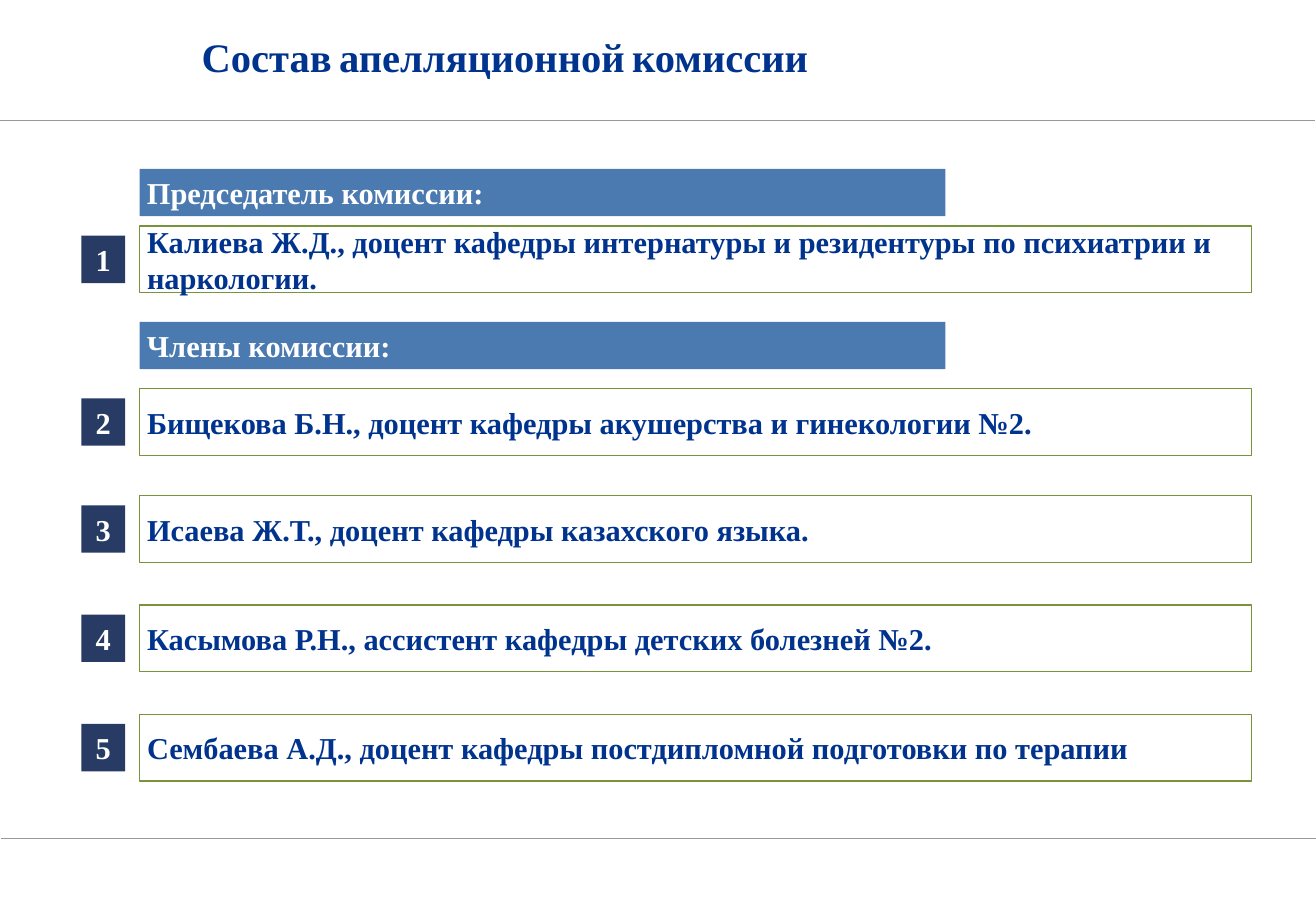
from dataclasses import dataclass

from lxml.etree import SubElement
from pptx import Presentation
from pptx.dml.color import RGBColor
from pptx.enum.shapes import MSO_CONNECTOR, MSO_SHAPE
from pptx.enum.text import MSO_ANCHOR, MSO_AUTO_SIZE, PP_ALIGN
from pptx.oxml.ns import qn
from pptx.slide import Slide
from pptx.util import Inches, Pt

SERIF = "Times New Roman"
NAVY, BADGE, BAND = "00338D", "283B64", "4A7AAF"
GREEN, GREY, WHITE = "77933C", "97989A", "FFFFFF"
ROW_LEFT, BADGE_LEFT, BADGE_DROP = 1.15, 0.67, 0.08


@dataclass
class Heading:
    top: float
    text: str


@dataclass
class Member:
    top: float
    text: str


HEADINGS = [Heading(1.39, "Председатель комиссии:"), Heading(2.65, "Члены комиссии:")]
MEMBERS = [
    Member(1.86, "Калиева Ж.Д., доцент кафедры интернатуры и резидентуры по психиатрии и наркологии."),
    Member(3.2, "Бищекова Б.Н., доцент кафедры акушерства и гинекологии №2."),
    Member(4.08, "Исаева Ж.Т., доцент кафедры казахского языка."),
    Member(4.98, "Касымова Р.Н., ассистент кафедры детских болезней №2."),
    Member(5.88, "Сембаева А.Д., доцент кафедры постдипломной подготовки по терапии"),
]


def rgb(color: str) -> RGBColor:
    return RGBColor.from_string(color)


def add_box(s: Slide, left: float, top: float, width: float, height: float, text: str,
            fill: str, color: str = WHITE, line: str | None = None,
            align: PP_ALIGN = PP_ALIGN.LEFT) -> None:
    sp = s.shapes.add_shape(MSO_SHAPE.RECTANGLE, Inches(left), Inches(top),
                            Inches(width), Inches(height))
    sp.shadow.inherit = False
    sp.fill.solid()
    sp.fill.fore_color.rgb = rgb(fill)
    if line:
        sp.line.color.rgb = rgb(line)
        sp.line.width = Pt(0.75)
    else:
        sp.line.fill.background()
    tf = sp.text_frame
    tf.word_wrap = True
    tf.vertical_anchor = MSO_ANCHOR.MIDDLE
    tf.margin_left = tf.margin_right = tf.margin_top = tf.margin_bottom = Inches(0.06)
    p = tf.paragraphs[0]
    p.text = text
    p.alignment = align
    p.font.name, p.font.size, p.font.bold = SERIF, Pt(18), True
    p.font.color.rgb = rgb(color)


def add_rule(s: Slide, left: float, top: float) -> None:
    line = s.shapes.add_connector(MSO_CONNECTOR.STRAIGHT, Inches(left), Inches(top),
                                  Inches(left + 10.82), Inches(top))
    line.line.color.rgb = rgb(GREY)
    line.line.width = Pt(0.5)
    SubElement(line._element.spPr, qn("a:effectLst"))


def set_title(s: Slide) -> None:
    sp = s.shapes.title
    sp.left, sp.top, sp.width, sp.height = Inches(1.56), Inches(-0.03), Inches(9.12), Inches(0.99)
    tf = sp.text_frame
    tf.auto_size = MSO_AUTO_SIZE.NONE
    tf.vertical_anchor = MSO_ANCHOR.MIDDLE
    p = tf.paragraphs[0]
    p.alignment = PP_ALIGN.LEFT
    # Narrow spaces between the words
    for text in ("Состав", " ", "апелляционной", " ", "комиссии"):
        r = p.add_run()
        r.text = text
        r.font.name, r.font.size = ("Arial", Pt(16)) if text == " " else (SERIF, Pt(24))
        r.font.bold = True
        r.font.color.rgb = rgb(NAVY)


def main() -> None:
    prs = Presentation()
    prs.slide_width, prs.slide_height = Inches(10.83), Inches(7.5)
    s = prs.slides.add_slide(prs.slide_layouts[5])

    # Title and rules
    set_title(s)
    add_rule(s, 0, 0.99)
    add_rule(s, 0.01, 6.9)

    # Section headings
    for heading in HEADINGS:
        add_box(s, ROW_LEFT, heading.top, 6.63, 0.39, heading.text, BAND)

    # Numbered members
    for number, member in enumerate(MEMBERS, start=1):
        add_box(s, BADGE_LEFT, member.top + BADGE_DROP, 0.36, 0.39, str(number), BADGE,
                align=PP_ALIGN.CENTER)
        add_box(s, ROW_LEFT, member.top, 9.15, 0.55, member.text, WHITE, NAVY, GREEN)

    prs.save("out.pptx")


if __name__ == "__main__":
    main()
